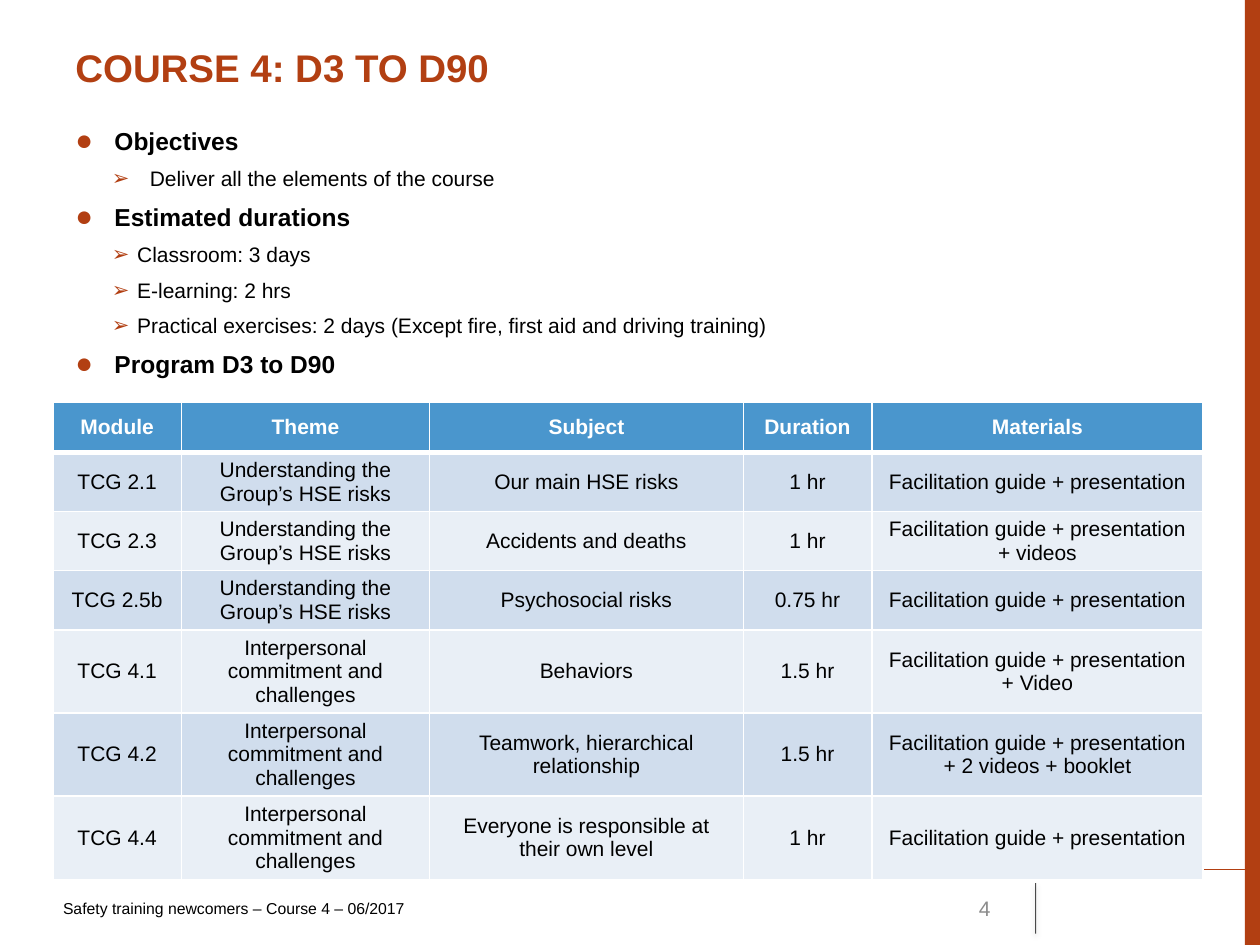
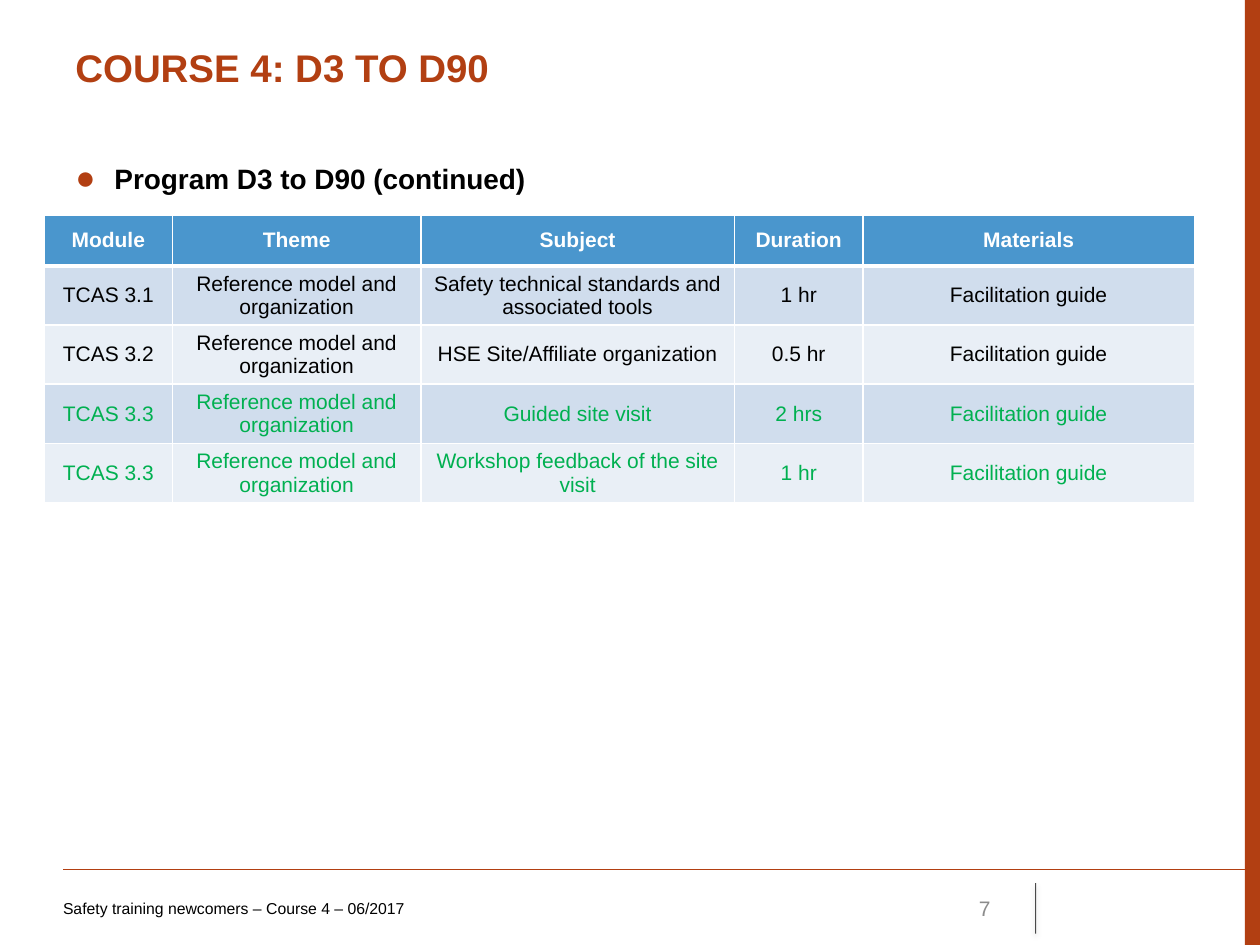
from dataclasses import dataclass
from typing import Any

from lxml import etree
from pptx import Presentation
from pptx.dml.color import RGBColor as RGB
from pptx.enum.shapes import MSO_CONNECTOR as Link, MSO_SHAPE as Shape
from pptx.enum.text import MSO_ANCHOR as Anchor, PP_ALIGN as Align
from pptx.oxml.ns import qn
from pptx.util import Inches, Pt

# Shared look
FONT = "Arial"
RUST, BLACK, WHITE, GRAY, GREEN = "B23F12", "000000", "FFFFFF", "8C8C8C", "00B050"
HEAD, BANDS = "4A96CD", ("D0DDED", "E9EFF6")
TITLE = "COURSE 4: D3 TO D90"
FOOTER = "Safety training newcomers – Course 4 – 06/2017"
COLS = (1.02, 1.97, 2.49, 1.02, 2.63)
SMALL, MID, TALL = 0.4, 0.47, 0.66  # rows of one, two and three lines
HEADS = ("Module", "Theme", "Subject", "Duration", "Materials")
RISKS = "Understanding the Group’s HSE risks"
BONDS = "Interpersonal commitment and challenges"
MODEL = "Reference model and organization"
GUIDE = "Facilitation guide"
SHOW = GUIDE + " + presentation"


@dataclass
class Point:
    """One bulleted line; sub points use the arrow bullet."""
    text: str
    size: float = 14
    sub: bool = False
    left: float = 0.31
    hang: float = 0.31


@dataclass
class Row:
    cells: tuple[str, ...]
    height: float = MID
    color: str = BLACK


@dataclass
class Page:
    number: int
    top: float
    height: float
    points: list[Point]
    grid: tuple[float, float]
    rows: list[Row]


def sub_point(text: str, left: float = 0.49, hang: float = 0.2) -> Point:
    return Point(text, 12, True, left, hang)


PAGES = [
    Page(4, 0.95, 2.1, [
        Point("Objectives"),
        sub_point("Deliver all the elements of the course", 0.59, 0.3),
        Point("Estimated durations"),
        sub_point("Classroom: 3 days"),
        sub_point("E-learning: 2 hrs"),
        sub_point("Practical exercises: 2 days (Except fire, first aid and driving training)"),
        Point("Program D3 to D90"),
    ], (0.42, 3.19), [
        Row(("TCG 2.1", RISKS, "Our main HSE risks", "1 hr", SHOW)),
        Row(("TCG 2.3", RISKS, "Accidents and deaths", "1 hr", SHOW + " + videos")),
        Row(("TCG 2.5b", RISKS, "Psychosocial risks", "0.75 hr", SHOW)),
        Row(("TCG 4.1", BONDS, "Behaviors", "1.5 hr", SHOW + " + Video"), TALL),
        Row(("TCG 4.2", BONDS, "Teamwork, hierarchical relationship", "1.5 hr",
             SHOW + " + 2 videos + booklet"), TALL),
        Row(("TCG 4.4", BONDS, "Everyone is responsible at their own level", "1 hr", SHOW),
            TALL),
    ]),
    Page(7, 1.23, 0.47, [Point("Program D3 to D90 (continued)", 16)], (0.35, 1.71), [
        Row(("TCAS 3.1", MODEL, "Safety technical standards and associated tools",
             "1 hr", GUIDE)),
        Row(("TCAS 3.2", MODEL, "HSE Site/Affiliate organization", "0.5 hr", GUIDE)),
        Row(("TCAS 3.3", MODEL, "Guided site visit", "2 hrs", GUIDE), color=GREEN),
        Row(("TCAS 3.3", MODEL, "Workshop feedback of the site visit", "1 hr", GUIDE),
            color=GREEN),
    ]),
]


def paint(fill: Any, color: str) -> None:
    fill.solid()
    fill.fore_color.rgb = RGB.from_string(color)


def node(parent: Any, tag: str, **attrs: Any) -> Any:
    return etree.SubElement(parent, qn(tag), {k: str(v) for k, v in attrs.items()})


def write(para: Any, text: str, *, size: float, color: str = BLACK,
          bold: bool = False, align: Any = None) -> None:
    para.alignment = align
    run = para.add_run()
    run.text = text
    font = run.font
    font.name, font.size, font.bold = FONT, Pt(size), bold
    paint(font.fill, color)


def add_box(slide: Any, left: float, top: float, width: float, height: float,
            anchor: Any = Anchor.TOP) -> Any:
    box = slide.shapes.add_textbox(Inches(left), Inches(top), Inches(width), Inches(height))
    frame = box.text_frame
    frame.word_wrap, frame.vertical_anchor = True, anchor
    return frame


def add_line(slide: Any, start: tuple[float, float], end: tuple[float, float],
             color: str, width: float) -> tuple[Any, Any]:
    line = slide.shapes.add_connector(Link.STRAIGHT, *map(Inches, start + end))
    line.line.width = Pt(width)
    paint(line.line.fill, color)
    # Drop the theme style so that only the settings here apply
    line._element.remove(line._element.find(qn("p:style")))
    return line, node(line._element.spPr, "a:effectLst")


def add_frame(slide: Any, number: int) -> None:
    # Side band and rules
    band = slide.shapes.add_shape(Shape.RECTANGLE, Inches(9.88), 0, Inches(0.12), Inches(7.5))
    band.shadow.inherit = False
    paint(band.fill, RUST)
    band.line.fill.background()
    add_line(slide, (0.5, 6.9), (10, 6.9), RUST, 0.75)
    mark, effects = add_line(slide, (8.22, 7.01), (8.22, 7.41), BLACK, 0.5)
    node(next(mark._element.spPr.iter(qn("a:srgbClr"))), "a:alpha", val=70000)
    shade = node(effects, "a:outerShdw", blurRad=Pt(3.1), dist=Pt(1.6), dir=5400000)
    node(node(shade, "a:srgbClr", val=BLACK), "a:alpha", val=38000)

    # Title, page number and footer
    title = add_box(slide, 0.5, 0.3, 8.99, 0.69)
    write(title.paragraphs[0], TITLE, size=22, color=RUST, bold=True)
    count = add_box(slide, 7.17, 7.01, 0.79, 0.4, Anchor.MIDDLE)
    write(count.paragraphs[0], str(number), size=12, color=GRAY, align=Align.RIGHT)
    foot = add_box(slide, 0.5, 7.01, 6.08, 0.4, Anchor.MIDDLE)
    foot.margin_left = 0
    write(foot.paragraphs[0], FOOTER, size=9)


def add_points(slide: Any, page: Page) -> None:
    frame = add_box(slide, 0.5, page.top, 8.99, page.height)
    for i, point in enumerate(page.points):
        para = frame.add_paragraph() if i else frame.paragraphs[0]
        para.level = int(point.sub)
        para.space_before, para.space_after = Pt(3 if i else 0), Pt(3)
        props = para._p.get_or_add_pPr()
        props.set("marL", str(Inches(point.left)))
        props.set("indent", str(-Inches(point.hang)))
        node(node(props, "a:buClr"), "a:srgbClr", val=RUST)
        node(props, "a:buSzPct", val=100000 if point.sub else 120000)
        node(props, "a:buFont", typeface=FONT)
        node(props, "a:buChar", char="➢" if point.sub else "●")
        write(para, point.text, size=point.size, bold=not point.sub)


def edge(cell: Any, widths: dict[str, float]) -> None:
    """Draw white borders; they precede the fill in the cell."""
    props = cell._tc.get_or_add_tcPr()
    for i, (side, width) in enumerate(widths.items()):
        line = node(props, f"a:ln{side}", w=Pt(width))
        node(node(line, "a:solidFill"), "a:srgbClr", val=WHITE)
        props.insert(i, line)


def add_grid(slide: Any, page: Page) -> None:
    rows = [Row(HEADS, SMALL, WHITE)] + page.rows
    left, top = page.grid
    table = slide.shapes.add_table(
        len(rows), len(COLS), Inches(left), Inches(top), Inches(sum(COLS)),
        Inches(sum(row.height for row in rows))).table
    for col, width in zip(table.columns, COLS):
        col.width = Inches(width)
    for r, row in enumerate(rows):
        table.rows[r].height = Inches(row.height)
        for c, text in enumerate(row.cells):
            cell = table.cell(r, c)
            cell.vertical_anchor = Anchor.MIDDLE
            cell.margin_top = cell.margin_bottom = Inches(0.02)
            paint(cell.fill, BANDS[(r - 1) % 2] if r else HEAD)
            edge(cell, {"L": 1, "R": 1, "T": 3 if r == 1 else 1, "B": 1 if r else 3})
            write(cell.text_frame.paragraphs[0], text, size=12, color=row.color,
                  bold=r == 0, align=Align.CENTER)


def main() -> None:
    deck = Presentation()
    deck.slide_width, deck.slide_height = Inches(10), Inches(7.5)
    for page in PAGES:
        slide = deck.slides.add_slide(deck.slide_layouts[6])
        paint(slide.background.fill, WHITE)
        add_frame(slide, page.number)
        add_points(slide, page)
        add_grid(slide, page)
    deck.save("out.pptx")


if __name__ == "__main__":
    main()
